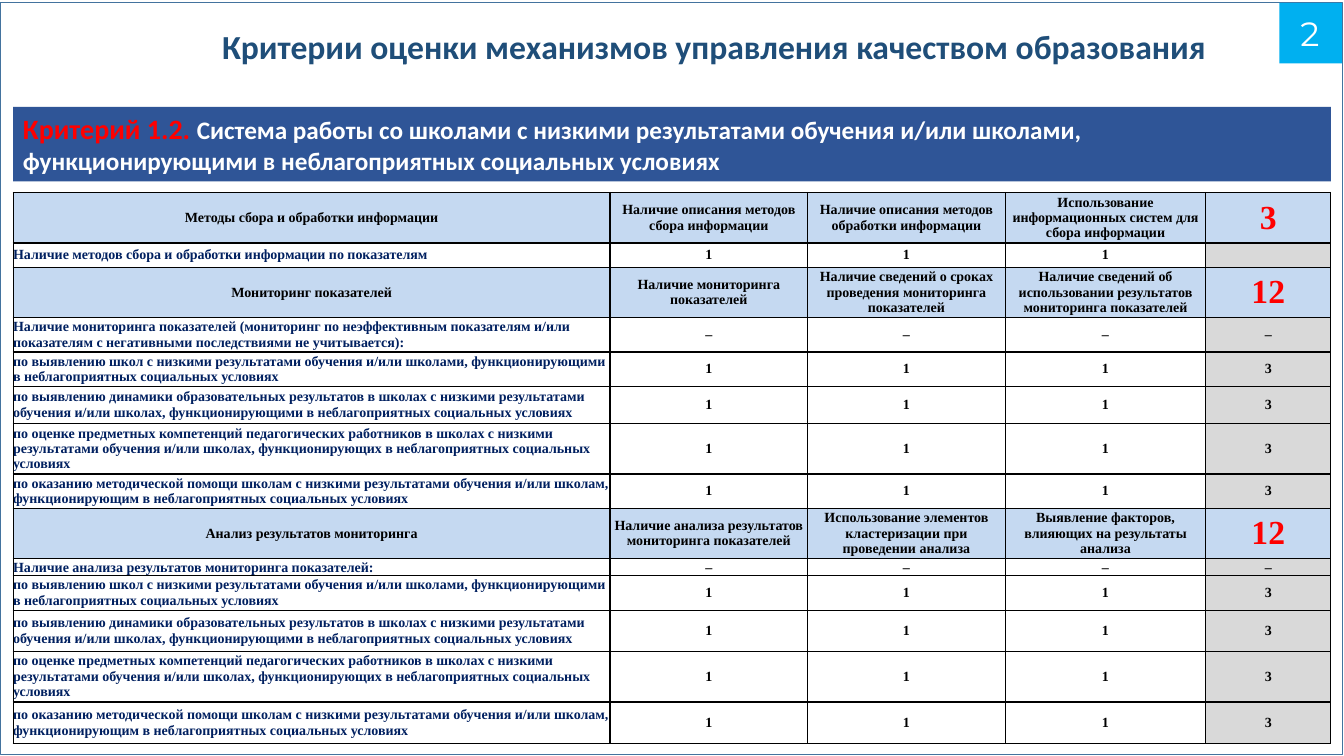
from lxml.etree import SubElement
from pptx import Presentation
from pptx.dml.color import RGBColor
from pptx.enum.shapes import MSO_SHAPE
from pptx.enum.text import MSO_ANCHOR, PP_ALIGN
from pptx.oxml.ns import qn
from pptx.util import Inches, Pt

COLORS = {
    "frame": "43739E", "title": "1F4E79", "band": "2F5597", "badge": "00B0F0",
    "header": "C5D9F1", "total": "D9D9D9", "indicator": "002060",
    "red": "FF0000", "white": "FFFFFF", "black": "000000",
}
TABLE_FONT = "Times New Roman"
COLUMN_WIDTHS = [5.92, 1.96, 1.96, 1.99, 1.24]
ROW_HEIGHTS = [0.5, 0.24, 0.5, 0.34, 0.34, 0.37, 0.5, 0.34,
               0.5, 0.17, 0.34, 0.41, 0.5, 0.41]

INDICATORS = [
    "по выявлению школ с низкими результатами обучения и/или школами, "
    "функционирующими в неблагоприятных социальных условиях",
    "по выявлению динамики образовательных результатов в школах с низкими результатами "
    "обучения и/или школах, функционирующими в неблагоприятных социальных условиях",
    "по оценке предметных компетенций педагогических работников в школах с низкими "
    "результатами обучения и/или школах, функционирующих в неблагоприятных социальных условиях",
    "по оказанию методической помощи школам с низкими результатами обучения и/или школам, "
    "функционирующим в неблагоприятных социальных условиях",
]
SCORED_INDICATORS = [[name, "1", "1", "1", "3"] for name in INDICATORS]
SECTIONS = [
    (["Методы сбора и обработки информации",
      "Наличие описания методов сбора информации",
      "Наличие описания методов обработки информации",
      "Использование информационных систем для сбора информации", "3"],
     [["Наличие методов сбора и обработки информации по показателям", "1", "1", "1", ""]]),
    (["Мониторинг показателей",
      "Наличие мониторинга показателей",
      "Наличие сведений о сроках проведения мониторинга показателей",
      "Наличие сведений об использовании результатов мониторинга показателей", "12"],
     [["Наличие мониторинга показателей (мониторинг по неэффективным показателям и/или "
       "показателям с негативными последствиями не учитывается):", "–", "–", "–", "–"],
      *SCORED_INDICATORS]),
    (["Анализ результатов мониторинга",
      "Наличие анализа результатов мониторинга показателей",
      "Использование элементов кластеризации при проведении анализа",
      "Выявление факторов, влияющих на результаты анализа", "12"],
     [["Наличие анализа результатов мониторинга показателей:", "–", "–", "–", "–"],
      *SCORED_INDICATORS]),
]


def rgb(name):
    """Return the named colour."""
    return RGBColor.from_string(COLORS[name])


def add_run(paragraph, text, size, color, font, bold=True):
    """Append one formatted run to a paragraph."""
    run = paragraph.add_run()
    run.text = text
    run.font.size = Pt(size)
    run.font.name = font
    run.font.bold = bold
    run.font.color.rgb = rgb(color)


def add_rectangle(slide, box, fill=None, line=None):
    """Draw a rectangle with an optional fill and thin outline."""
    shape = slide.shapes.add_shape(MSO_SHAPE.RECTANGLE, *map(Inches, box))
    shape.shadow.inherit = False
    if fill:
        shape.fill.solid()
        shape.fill.fore_color.rgb = rgb(fill)
    else:
        shape.fill.background()
    if line:
        shape.line.color.rgb = rgb(line)
        shape.line.width = Pt(0.25)
    else:
        shape.line.fill.background()
    return shape


def add_title(slide, box):
    """Place the slide title centred in its box."""
    frame = slide.shapes.add_textbox(*map(Inches, box)).text_frame
    frame.word_wrap = True
    frame.vertical_anchor = MSO_ANCHOR.MIDDLE
    paragraph = frame.paragraphs[0]
    paragraph.alignment = PP_ALIGN.CENTER
    paragraph.line_spacing = 0.9
    add_run(paragraph, "Критерии оценки механизмов управления качеством образования ",
            24, "title", "Calibri")


def add_criterion_band(slide, box):
    """Place the coloured band naming the criterion."""
    frame = add_rectangle(slide, box, fill="band").text_frame
    frame.word_wrap = True
    frame.vertical_anchor = MSO_ANCHOR.TOP
    paragraph = frame.paragraphs[0]
    paragraph.alignment = PP_ALIGN.LEFT
    add_run(paragraph, "Критерий 1.2. ", 20, "red", "Calibri")
    add_run(paragraph, "Система работы со школами с низкими результатами обучения и/или "
            "школами, функционирующими в неблагоприятных социальных условиях",
            18, "white", "Calibri")


def add_page_badge(slide, box):
    """Place the page number on its square."""
    left, top, width, height = box
    add_rectangle(slide, box, fill="badge")
    number_box = (left + 0.11, top + 0.05, width / 2, height - 0.1)
    frame = slide.shapes.add_textbox(*map(Inches, number_box)).text_frame
    frame.word_wrap = False
    add_run(frame.paragraphs[0], "2", 24, "white", "Montserrat", bold=False)


def set_borders(cell):
    """Draw black one-point borders, ahead of the fill, on every side of a cell."""
    properties = cell._tc.get_or_add_tcPr()
    for index, side in enumerate(("lnL", "lnR", "lnT", "lnB")):
        line = SubElement(properties, qn(f"a:{side}"), w=str(Pt(1)))
        fill = SubElement(line, qn("a:solidFill"))
        SubElement(fill, qn("a:srgbClr"), val=COLORS["black"])
        properties.insert(index, line)


def fill_cell(cell, text, is_header, column):
    """Write and format a table cell by its row type and column."""
    is_first, is_last = column == 0, column == len(COLUMN_WIDTHS) - 1
    cell.margin_left = cell.margin_right = cell.margin_top = cell.margin_bottom = 0
    cell.vertical_anchor = MSO_ANCHOR.MIDDLE
    if is_header or is_last:
        cell.fill.solid()
        cell.fill.fore_color.rgb = rgb("header" if is_header else "total")
    else:
        cell.fill.background()
    set_borders(cell)
    paragraph = cell.text_frame.paragraphs[0]
    paragraph.alignment = PP_ALIGN.LEFT if is_first and not is_header else PP_ALIGN.CENTER
    size, color = 10, "black"
    if is_header and is_last:
        size, color = 24, "red"
    elif is_first and not is_header:
        color = "indicator"
    if text:
        add_run(paragraph, text, size, color, TABLE_FONT)
    else:
        SubElement(paragraph._p, qn("a:endParaRPr"), sz=str(size * 100))


def add_criteria_table(slide, box):
    """Place the table of criteria, section by section."""
    rows = [(values, is_header) for header, body in SECTIONS
            for values, is_header in [(header, True), *((row, False) for row in body)]]
    table = slide.shapes.add_table(len(rows), len(COLUMN_WIDTHS), *map(Inches, box)).table
    table.first_row = table.horz_banding = False
    for column, width in zip(table.columns, COLUMN_WIDTHS):
        column.width = Inches(width)
    for row, height in zip(table.rows, ROW_HEIGHTS):
        row.height = Inches(height)
    for row_index, (values, is_header) in enumerate(rows):
        for column_index, text in enumerate(values):
            fill_cell(table.cell(row_index, column_index), text, is_header, column_index)


def main():
    """Build the slide and save the presentation."""
    presentation = Presentation()
    presentation.slide_width, presentation.slide_height = Inches(13.33), Inches(7.5)
    slide = presentation.slides.add_slide(presentation.slide_layouts[6])
    add_rectangle(slide, (0, 0.02, 13.31, 7.46), line="frame")
    add_title(slide, (1.24, 0.03, 11.76, 0.91))
    add_criterion_band(slide, (0.13, 1.06, 13.07, 0.74))
    add_criteria_table(slide, (0.13, 1.91, 13.07, 5.46))
    add_page_badge(slide, (12.69, 0.03, 0.62, 0.6))
    presentation.save("out.pptx")


if __name__ == "__main__":
    main()
